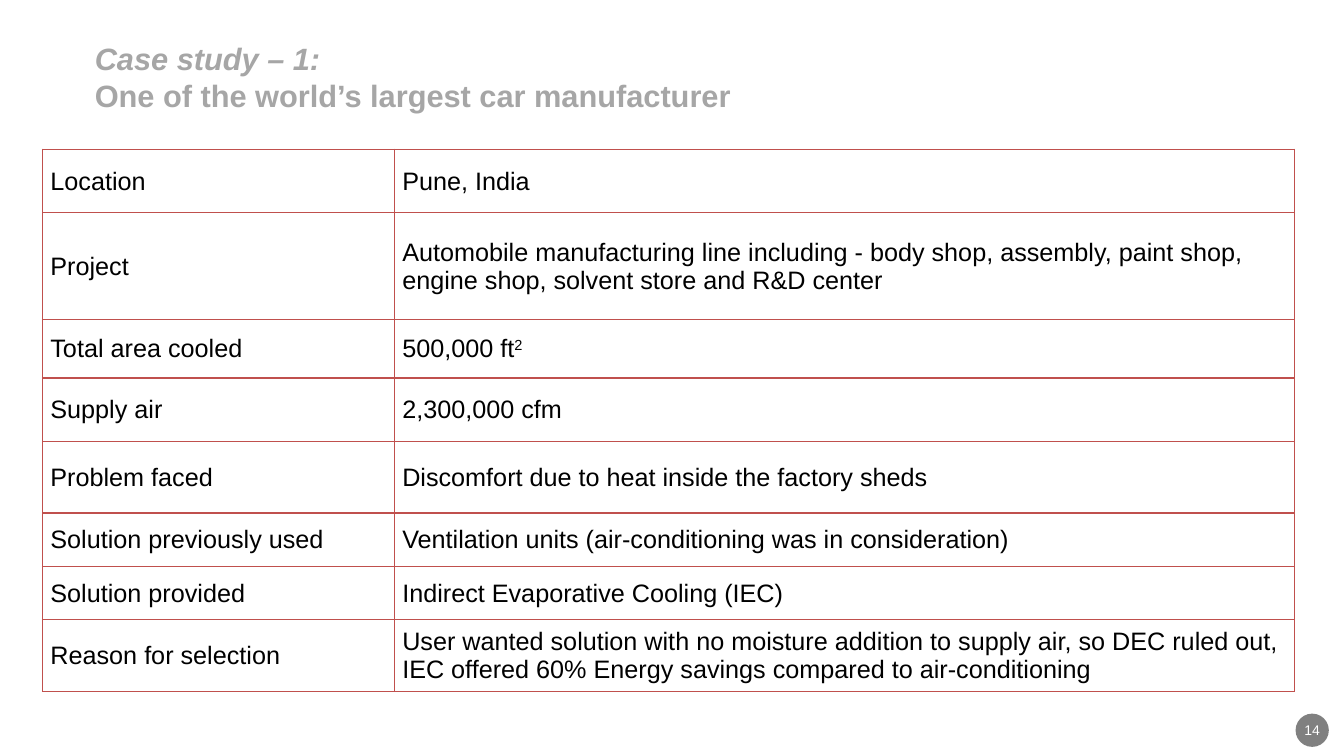
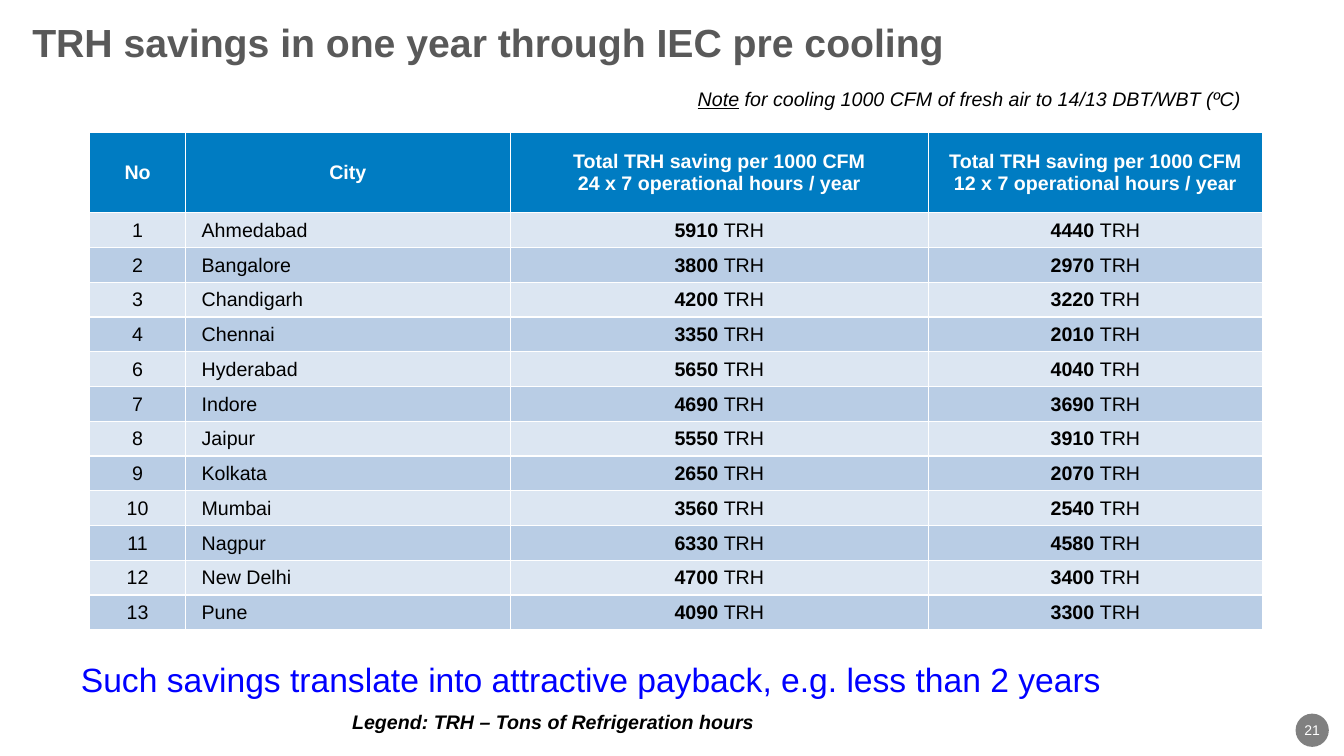
from pptx import Presentation
from pptx.dml.color import RGBColor
from pptx.enum.shapes import MSO_SHAPE as Shape
from pptx.enum.text import MSO_ANCHOR as Anchor, MSO_AUTO_SIZE as AutoSize, PP_ALIGN as Align
from pptx.oxml.ns import qn
from pptx.util import Inches, Pt
from lxml.etree import SubElement

FONT = "Arial"
COLORS = {
    "black": "000000", "white": "FFFFFF", "blue": "0000FF",
    "light_grey": "A6A6A6", "dark_grey": "595959", "badge": "808080",
    "grid": "C0504D", "header": "007CC2", "band_light": "DCE6F2", "band_dark": "B9CDE5",
}

CASE_ROWS = [
    ("Location", ["Pune, India"], 0.63),
    ("Project", ["Automobile manufacturing line including - body shop, assembly, paint shop, "
                 "engine shop, solvent store and R&D center"], 1.06),
    ("Total area cooled", [["500,000 ft", ("2", "superscript")]], 0.58),
    ("Supply air", ["2,300,000 cfm"], 0.63),
    ("Problem faced", ["Discomfort due to heat inside the factory sheds"], 0.71),
    ("Solution previously used", ["Ventilation units (air-conditioning was in consideration)"], 0.53),
    ("Solution provided", ["Indirect Evaporative Cooling (IEC)"], 0.53),
    ("Reason for selection",
     ["User wanted solution with no moisture addition to supply air, so DEC ruled out,",
      "IEC offered 60% Energy savings compared to air-conditioning"], 0.71),
]

SAVINGS_HEADER = [
    ["No"], ["City"],
    ["Total TRH saving per 1000 CFM", "24 x 7 operational hours / year"],
    ["Total TRH saving per 1000 CFM", "12 x 7 operational hours / year"],
]
SAVINGS = [
    (1, "Ahmedabad", 5910, 4440), (2, "Bangalore", 3800, 2970),
    (3, "Chandigarh", 4200, 3220), (4, "Chennai", 3350, 2010),
    (6, "Hyderabad", 5650, 4040), (7, "Indore", 4690, 3690),
    (8, "Jaipur", 5550, 3910), (9, "Kolkata", 2650, 2070),
    (10, "Mumbai", 3560, 2540), (11, "Nagpur", 6330, 4580),
    (12, "New Delhi", 4700, 3400), (13, "Pune", 4090, 3300),
]


def rgb(name):
    return RGBColor.from_string(COLORS[name])


def write(frame, lines, size, color="black", align=Align.LEFT, bold=False, italic=False):
    """Each line is a string or a list of strings and (text, emphasis) pairs."""
    for index, line in enumerate(lines):
        para = frame.paragraphs[0] if index == 0 else frame.add_paragraph()
        para.alignment = align
        font = para.font
        font.name, font.size, font.bold, font.italic = FONT, Pt(size), bold, italic
        font.color.rgb = rgb(color)
        for part in [line] if isinstance(line, str) else line:
            if part == "\n":
                para.add_line_break()
                continue
            text, emphasis = (part, None) if isinstance(part, str) else part
            span = para.add_run()
            span.text = text
            if emphasis == "superscript":
                span.font._element.set("baseline", "30000")
            elif emphasis:
                setattr(span.font, emphasis, True)


def add_page(deck, title, place, size, color, number):
    page = deck.slides.add_slide(deck.slide_layouts[5])
    # Title
    box = page.shapes.title
    box.left, box.top, box.width, box.height = map(Inches, place)
    frame = box.text_frame
    frame.auto_size = AutoSize.NONE
    frame.word_wrap = True
    frame.vertical_anchor = Anchor.MIDDLE
    write(frame, [title], size, color, bold=True)
    # Page number badge
    badge = page.shapes.add_shape(Shape.OVAL, Inches(12.85), Inches(7.08), Inches(0.33), Inches(0.33))
    badge.shadow.inherit = False
    badge.fill.solid()
    badge.fill.fore_color.rgb = rgb("badge")
    badge.line.fill.background()
    badge.text_frame.word_wrap = False
    badge.text_frame.vertical_anchor = Anchor.MIDDLE
    write(badge.text_frame, [str(number)], 10, "white", Align.CENTER)
    return page


def add_text(page, place, line, size, wrap=True, **style):
    box = page.shapes.add_textbox(*map(Inches, place))
    box.text_frame.word_wrap = wrap
    write(box.text_frame, [line], size, **style)


def add_grid(page, left, top, widths, heights):
    frame = page.shapes.add_table(len(heights), len(widths), Inches(left), Inches(top),
                                  Inches(sum(widths)), Inches(sum(heights)))
    table = frame.table
    table.first_row = table.horz_banding = False
    for column, width in zip(table.columns, widths):
        column.width = Inches(width)
    for row, height in zip(table.rows, heights):
        row.height = Inches(height)
    return table


def fill_cell(cell, lines, size, border, fill=None, indent=0.01, **style):
    cell.vertical_anchor = Anchor.MIDDLE
    cell.margin_left = Inches(indent)
    cell.margin_top = cell.margin_right = Inches(0.01)
    cell.margin_bottom = 0
    properties = cell._tc.get_or_add_tcPr()
    for side in ("lnL", "lnR", "lnT", "lnB"):
        edge = SubElement(properties, qn(f"a:{side}"), w=str(Pt(1)))
        SubElement(SubElement(edge, qn("a:solidFill")), qn("a:srgbClr"), val=COLORS[border])
    if fill:
        cell.fill.solid()
        cell.fill.fore_color.rgb = rgb(fill)
    else:
        cell.fill.background()
    write(cell.text_frame, lines, size, **style)


def build_case_study(deck):
    title = [("Case study – 1:", "italic"), "\n", "One of the world’s largest car manufacturer"]
    page = add_page(deck, title, (0.84, 0.29, 10.33, 0.94), 22, "light_grey", 14)
    table = add_grid(page, 0.42, 1.48, [3.49, 8.93], [height for _, _, height in CASE_ROWS])
    for row, (label, lines, _) in enumerate(CASE_ROWS):
        for column, content in enumerate(([label], lines)):
            fill_cell(table.cell(row, column), content, 18, "grid", indent=0.08)


def build_savings(deck):
    page = add_page(deck, "TRH savings in one year through IEC pre cooling",
                    (0.22, 0.08, 10.33, 0.67), 28, "dark_grey", 21)
    # Savings by city
    table = add_grid(page, 0.89, 1.31, [0.95, 3.22, 4.15, 3.31], [0.8] + [0.345] * len(SAVINGS))
    for column, lines in enumerate(SAVINGS_HEADER):
        fill_cell(table.cell(0, column), lines, 14, "white", "header",
                  color="white", align=Align.CENTER, bold=True)
    for row, (number, city, full_day, half_day) in enumerate(SAVINGS, 1):
        band = "band_light" if row % 2 else "band_dark"
        savings = [[(f"{value} ", "bold"), "TRH"] for value in (full_day, half_day)]
        for column, line in enumerate([str(number), city, *savings]):
            is_city = column == 1
            fill_cell(table.cell(row, column), [line], 14, "white", band,
                      indent=0.16 if is_city else 0.01,
                      align=Align.LEFT if is_city else Align.CENTER)
    # Note, conclusion and legend
    add_text(page, (5.72, 0.81, 6.69, 0.34),
             [("Note", "underline"), " for cooling 1000 CFM of fresh air to 14/13 DBT/WBT (ºC)"],
             14, align=Align.RIGHT, italic=True)
    add_text(page, (0.65, 6.49, 10.42, 0.5),
             "Such savings translate into attractive payback, e.g. less than 2 years",
             24, wrap=False, color="blue", align=Align.CENTER)
    add_text(page, (0.89, 6.99, 6.69, 0.34), "Legend: TRH – Tons of Refrigeration hours",
             14, align=Align.RIGHT, bold=True, italic=True)


def main():
    deck = Presentation()
    deck.slide_width, deck.slide_height = Inches(13.33), Inches(7.5)
    build_case_study(deck)
    build_savings(deck)
    deck.save("out.pptx")


if __name__ == "__main__":
    main()
